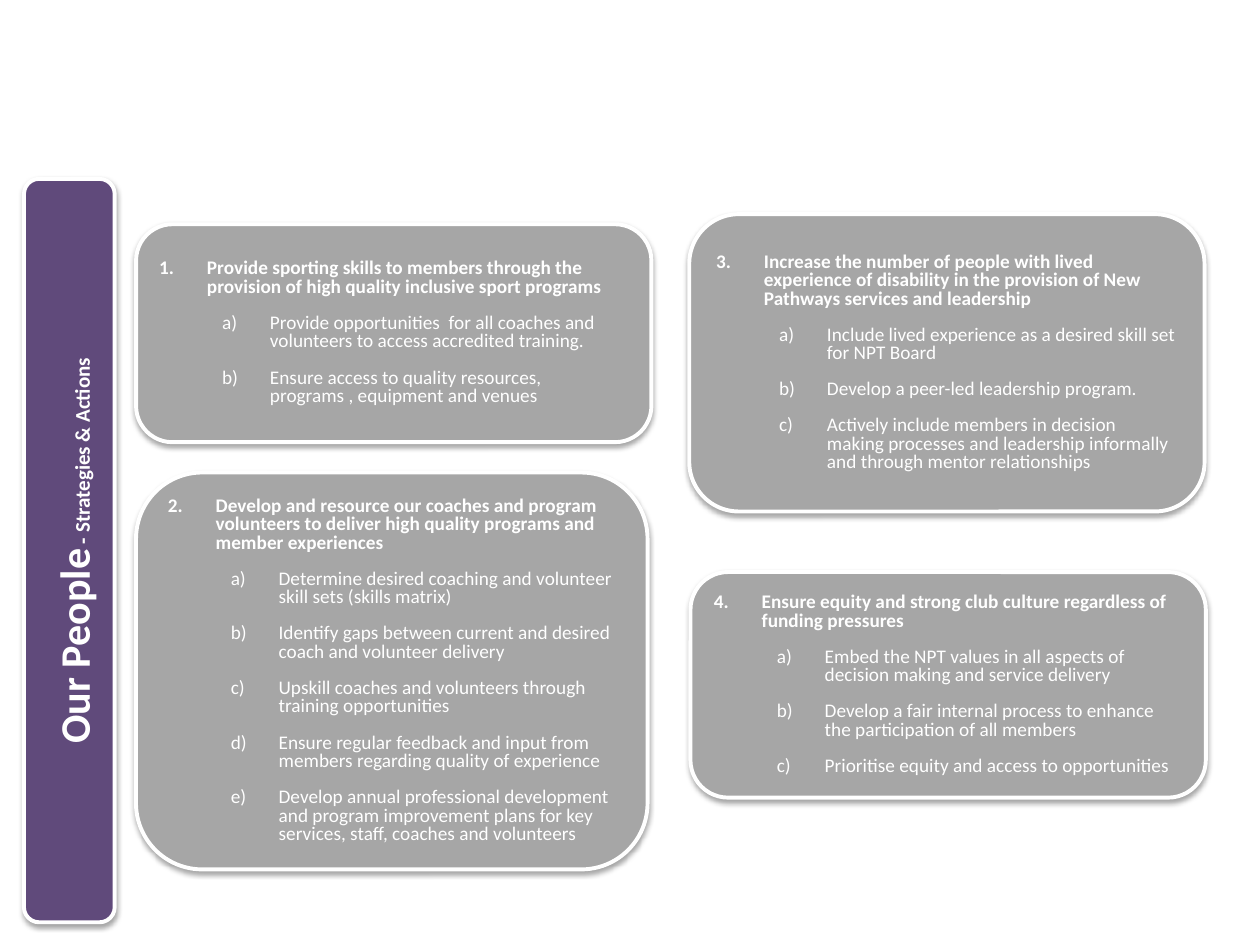
from lxml.etree import SubElement
from pptx import Presentation
from pptx.dml.color import RGBColor
from pptx.enum.shapes import MSO_SHAPE
from pptx.enum.text import MSO_ANCHOR, MSO_AUTO_SIZE, PP_ALIGN
from pptx.oxml import parse_xml
from pptx.oxml.ns import nsdecls, qn
from pptx.util import Inches, Pt

TITLE = [("Our People", "title"), (" - Strategies & Actions", "sub")]
BAR = (0.19, 1.42, 0.72, 5.9)
CARDS = [
    ((1.08, 1.78, 4.09, 1.73),
     "Provide sporting skills to members through the provision of high quality inclusive sport programs",
     ["Provide opportunities  for all coaches and volunteers to access accredited training.",
      "Ensure access to quality resources, programs , equipment and venues"]),
    ((1.08, 3.75, 4.06, 3.15),
     "Develop and resource our coaches and program volunteers to deliver high quality programs and member experiences",
     ["Determine desired coaching and volunteer skill sets (skills matrix)",
      "Identify gaps between current and desired coach and volunteer delivery",
      "Upskill coaches and volunteers through training opportunities",
      "Ensure regular feedback and input from members regarding quality of experience",
      "Develop annual professional development and program improvement plans for key services, staff, coaches and volunteers"]),
    ((5.47, 1.7, 4.09, 2.36),
     "Increase the number of people with lived experience of disability in the provision of New Pathways services and leadership",
     ["Include lived experience as a desired skill set for NPT Board",
      "Develop a peer-led leadership program.",
      "Actively include members in decision making processes and leadership informally and through mentor relationships"]),
    ((5.48, 4.54, 4.09, 1.79),
     "Ensure equity and strong club culture regardless of funding pressures",
     ["Embed the NPT values in all aspects of decision making and service delivery",
      "Develop a fair internal process to enhance the participation of all members",
      "Prioritise equity and access to opportunities"]),
]
THEME = {
    "font": "Calibri",
    "bar": RGBColor.from_string("604A7B"),
    "card": RGBColor.from_string("A6A6A6"),
    "light": RGBColor.from_string("FFFFFF"),
    "title": Pt(24), "sub": Pt(12), "body": Pt(11),
    "line": Pt(2.25), "after": Pt(10),
}
SHADOW = (
    f'<a:effectLst {nsdecls("a")}><a:outerShdw blurRad="{Pt(3.1)}" dist="{Pt(1.8)}" '
    'dir="5400000" rotWithShape="0"><a:srgbClr val="000000"><a:alpha val="35000"/>'
    '</a:srgbClr></a:outerShdw></a:effectLst>'
)


def add_panel(slide, box, fill):
    panel = slide.shapes.add_shape(MSO_SHAPE.ROUNDED_RECTANGLE, *map(Inches, box))
    panel.fill.solid()
    panel.fill.fore_color.rgb = THEME[fill]
    panel.line.color.rgb = THEME["light"]
    panel.line.width = THEME["line"]
    panel._element.spPr.append(parse_xml(SHADOW))
    return panel


def add_run(para, text, size, bold):
    run = para.add_run()
    run.text = text
    font = run.font
    font.name, font.size, font.bold = THEME["font"], THEME[size], bold
    font.color.rgb = THEME["light"]


def space(para, align, lines):
    para.alignment = align
    para.line_spacing = lines
    para.space_before = Pt(0)
    para.space_after = THEME["after"]


def add_item(para, text, level, style, start=1):
    para.level = level
    space(para, PP_ALIGN.LEFT, 0.8)
    props = para._p.get_or_add_pPr()
    props.set("marL", str(Inches(0.38 + 0.5 * level)))
    props.set("indent", str(-Inches(0.38)))
    mark = SubElement(props, qn("a:buAutoNum"), type=style)
    if start > 1:
        mark.set("startAt", str(start))
    add_run(para, text, "body", level == 0)


def add_title(slide):
    left, top, width, height = BAR
    add_panel(slide, BAR, "bar")
    title = slide.shapes.title
    slide.shapes._spTree.append(title._element)
    title.left = Inches(left + (width - height) / 2)
    title.top = Inches(top + (height - width) / 2)
    title.width, title.height = Inches(height), Inches(width)
    title.rotation = 270
    frame = title.text_frame
    frame.word_wrap = True
    frame.auto_size = MSO_AUTO_SIZE.NONE
    frame.vertical_anchor = MSO_ANCHOR.MIDDLE
    para = frame.paragraphs[0]
    space(para, PP_ALIGN.CENTER, 1.15)
    for text, size in TITLE:
        add_run(para, text, size, True)


def add_card(slide, number, box, head, actions):
    frame = add_panel(slide, box, "card").text_frame
    frame.word_wrap = True
    frame.vertical_anchor = MSO_ANCHOR.MIDDLE
    add_item(frame.paragraphs[0], head, 0, "arabicPeriod", number)
    for action in actions:
        add_item(frame.add_paragraph(), action, 1, "alphaLcParenR")


def main():
    deck = Presentation()
    deck.slide_width, deck.slide_height = Inches(10), Inches(7.5)
    slide = deck.slides.add_slide(deck.slide_layouts[5])
    add_title(slide)
    for number, card in enumerate(CARDS, 1):
        add_card(slide, number, *card)
    deck.save("out.pptx")


if __name__ == "__main__":
    main()
